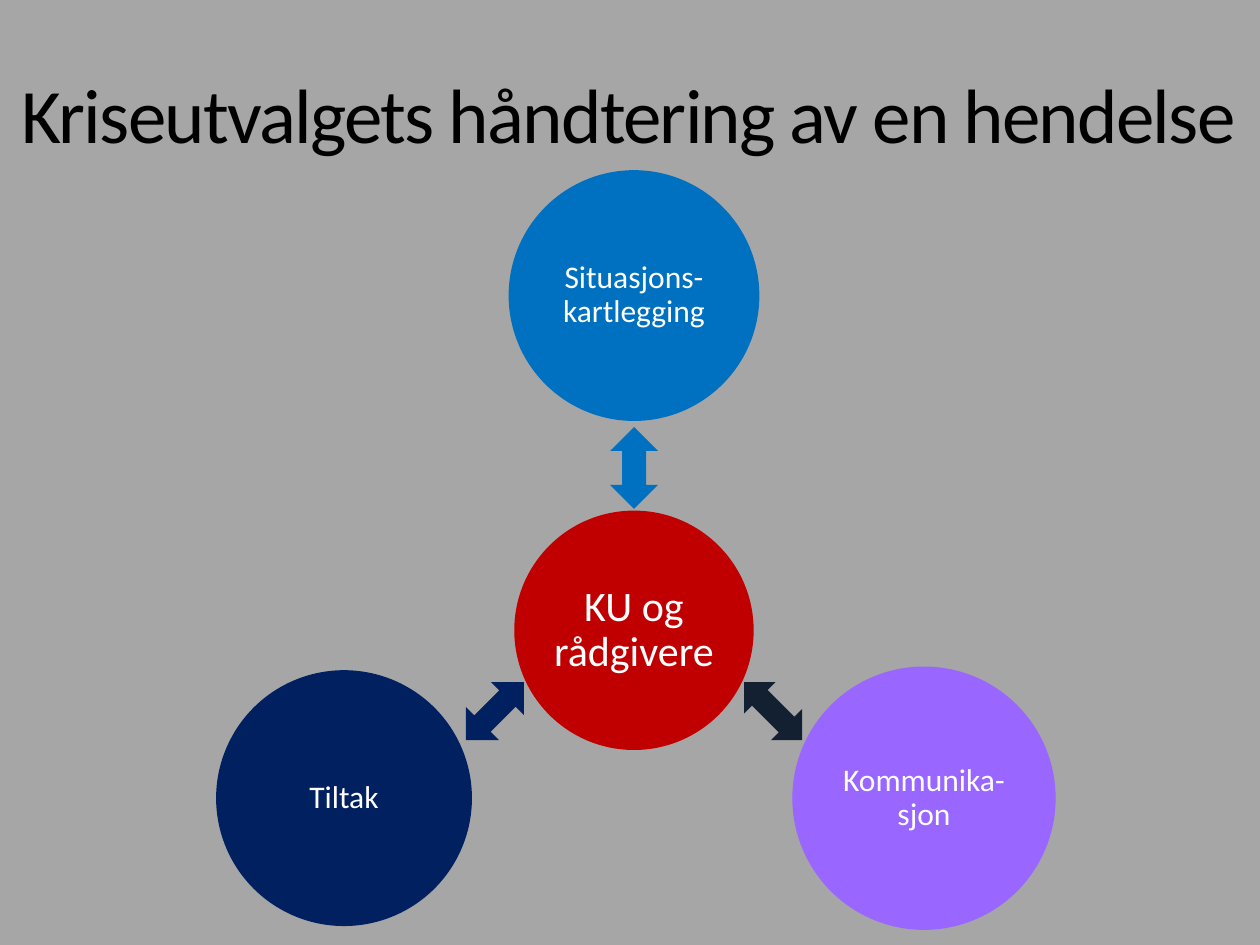
from dataclasses import dataclass

from pptx import Presentation
from pptx.dml.color import RGBColor
from pptx.enum.shapes import MSO_SHAPE
from pptx.enum.text import MSO_ANCHOR, PP_ALIGN
from pptx.util import Pt

ELLIPSE = MSO_SHAPE.OVAL
ARROW = MSO_SHAPE.UP_DOWN_ARROW
MIDDLE = MSO_ANCHOR.MIDDLE
CENTER = PP_ALIGN.CENTER

FONT = "Calibri"
COLORS = {
    "background": "A6A6A6",
    "title": "000000",
    "label": "FFFFFF",
    "hub": "C00000",
    "mapping": "0070C0",
    "communication": "9966FF",
    "communication_arrow": "122031",
    "measures": "002060",
}

# Centre of the hub; the other parts are placed as offsets from it
HUB_X, HUB_Y = 362.3, 360.2
ARROW_LENGTH = 46.8


@dataclass
class Circle:
    text: str
    dx: float
    dy: float
    diameter: float
    color: str
    size: float = 18


@dataclass
class Arrow:
    dx: float
    dy: float
    width: float
    color: str
    rotation: float = 0


CIRCLES = [
    Circle("KU og rådgivere", 0, 0, 136.8, "hub", 24),
    Circle("Situasjons-kartlegging", 0, -191.3, 143.3, "mapping"),
    Circle("Kommunika-sjon", 165.7, 95.9, 150.5, "communication"),
    Circle("Tiltak", -165.7, 95.9, 146.2, "measures"),
]
ARROWS = [
    Arrow(0, -92.8, 27.4, "mapping"),
    Arrow(79.5, 46.2, 25.2, "communication_arrow", 135),
    Arrow(-79.5, 46.2, 26.6, "measures", 45),
]


def write_text(shape, text: str, *, size: float, color: str, inset: float,
               line_spacing: float = 1, tracking: float = 0) -> None:
    """Write one centred paragraph; tracking is in points."""
    frame = shape.text_frame
    frame.word_wrap = True
    frame.vertical_anchor = MIDDLE
    frame.margin_left = frame.margin_right = Pt(inset)
    frame.margin_top = frame.margin_bottom = Pt(inset)
    para = frame.paragraphs[0]
    para.alignment = CENTER
    para.line_spacing = line_spacing
    span = para.add_run()
    span.text = text
    span.font.name = FONT
    span.font.size = Pt(size)
    span.font.color.rgb = RGBColor.from_string(COLORS[color])
    if tracking:
        span.font._element.set("spc", str(round(tracking * 100)))


def add_centred_shape(page, kind, dx: float, dy: float,
                      width: float, height: float, color: str):
    """Add a plain filled shape centred at an offset from the hub."""
    shape = page.shapes.add_shape(
        kind, Pt(HUB_X + dx - width / 2), Pt(HUB_Y + dy - height / 2),
        Pt(width), Pt(height))
    shape.shadow.inherit = False
    shape.fill.solid()
    shape.fill.fore_color.rgb = RGBColor.from_string(COLORS[color])
    shape.line.fill.background()
    return shape


def draw_circle(page, circle: Circle) -> None:
    shape = add_centred_shape(page, ELLIPSE, circle.dx, circle.dy,
                              circle.diameter, circle.diameter, circle.color)
    write_text(shape, circle.text, size=circle.size, color="label",
               inset=2, line_spacing=0.9)


def draw_arrow(page, arrow: Arrow) -> None:
    shape = add_centred_shape(page, ARROW, arrow.dx, arrow.dy,
                              arrow.width, ARROW_LENGTH, arrow.color)
    shape.rotation = arrow.rotation


def main() -> None:
    deck = Presentation()
    deck.slide_width, deck.slide_height = Pt(720), Pt(540)
    page = deck.slides.add_slide(deck.slide_layouts[6])
    page.background.fill.solid()
    page.background.fill.fore_color.rgb = RGBColor.from_string(
        COLORS["background"])

    # Title
    title = page.shapes.add_textbox(Pt(0), Pt(23.8), Pt(718.6), Pt(81.4))
    write_text(title, "Kriseutvalgets håndtering av en hendelse",
               size=44, color="title", inset=3.6, tracking=-1)

    # Hub, surrounding circles and the arrows between them
    for arrow in ARROWS:
        draw_arrow(page, arrow)
    for circle in CIRCLES:
        draw_circle(page, circle)

    deck.save("out.pptx")


if __name__ == "__main__":
    main()
